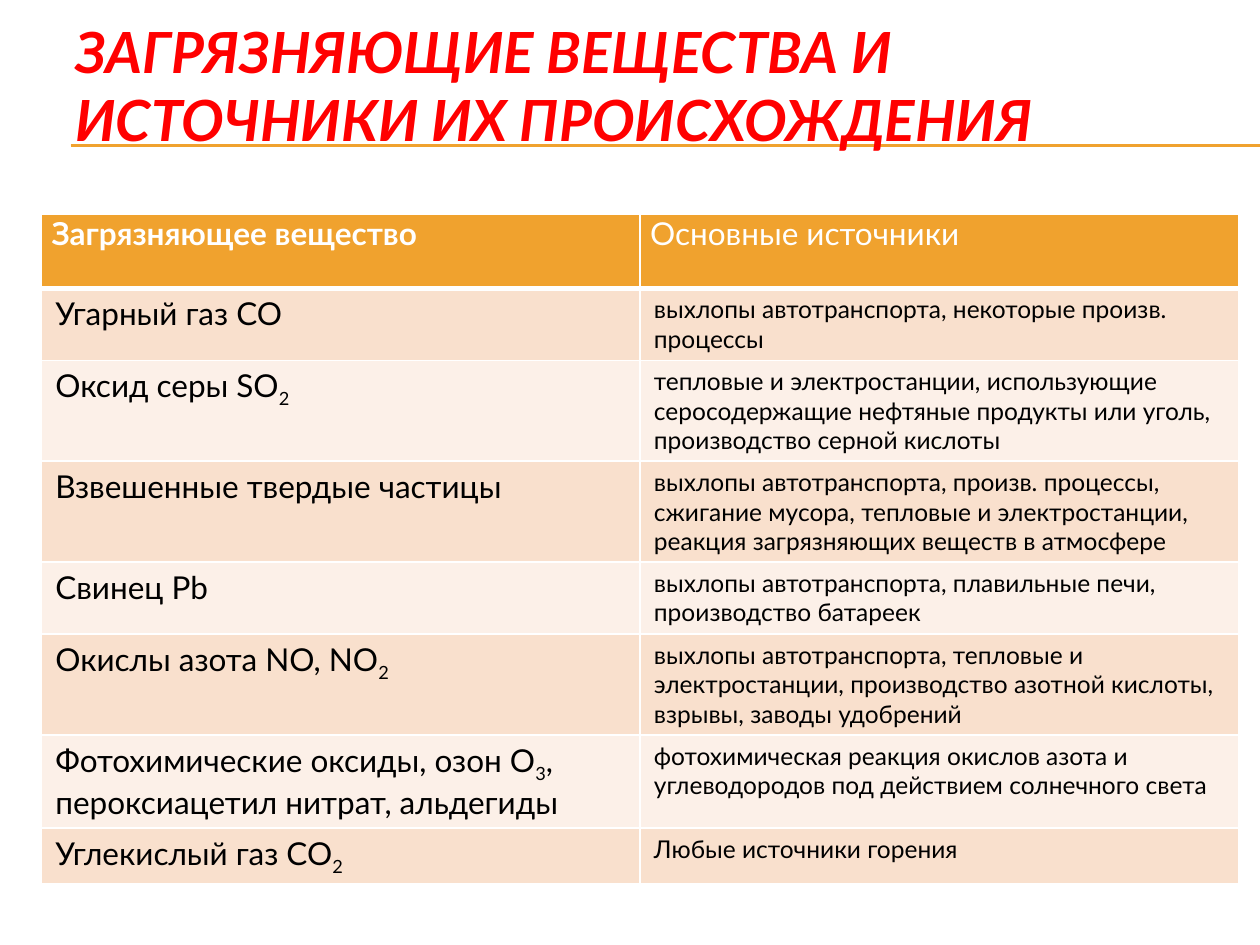
from lxml import etree
from pptx import Presentation
from pptx.dml.color import RGBColor
from pptx.enum.shapes import MSO_CONNECTOR
from pptx.enum.text import MSO_ANCHOR
from pptx.oxml.ns import qn
from pptx.util import Inches, Pt

STRAIGHT = MSO_CONNECTOR.STRAIGHT
MIDDLE = MSO_ANCHOR.MIDDLE
TOP = MSO_ANCHOR.TOP
RED = RGBColor(0xFF, 0x00, 0x00)
WHITE = RGBColor(0xFF, 0xFF, 0xFF)
BLACK = RGBColor(0x00, 0x00, 0x00)
ORANGE = RGBColor(0xF0, 0xA2, 0x2E)
PEACH = RGBColor(0xF9, 0xE0, 0xCD)
CREAM = RGBColor(0xFC, 0xF0, 0xE8)

TITLE = "ЗАГРЯЗНЯЮЩИЕ ВЕЩЕСТВА И ИСТОЧНИКИ ИХ ПРОИСХОЖДЕНИЯ"
ROWS = [
    (0.59, "Загрязняющее вещество", "Основные источники"),
    (0.57, "Угарный газ СО", "выхлопы автотранспорта, некоторые произв. процессы"),
    (0.8, "Оксид серы SO_2",
     "тепловые и электростанции, использующие серосодержащие нефтяные "
     "продукты или уголь, производство серной кислоты"),
    (0.8, "Взвешенные твердые частицы",
     "выхлопы автотранспорта, произв. процессы, сжигание мусора, тепловые и "
     "электростанции, реакция загрязняющих веществ в атмосфере"),
    (0.57, "Свинец Pb",
     "выхлопы автотранспорта, плавильные печи, производство батареек"),
    (0.8, "Окислы азота NO, NO_2",
     "выхлопы автотранспорта, тепловые и электростанции, производство "
     "азотной кислоты, взрывы, заводы удобрений"),
    (0.74, "Фотохимические оксиды, озон О_3_, пероксиацетил нитрат, альдегиды",
     "фотохимическая реакция окислов азота и углеводородов под действием "
     "солнечного света"),
    (0.43, "Углекислый газ СО_2", "Любые источники горения"),
]


class Painter:
    """Draws styled elements on the current slide."""

    face = "Lato"

    def __init__(self, slide):
        self.slide = slide

    def text(self, frame, words, size, color, bold=False, italic=False):
        para = frame.paragraphs[0]
        font = para.font
        font.name, font.size = self.face, Pt(size)
        font.bold, font.italic = bold, italic
        font.color.rgb = color
        for pos, part in enumerate(words.split("_")):
            run = para.add_run()
            run.text = part
            if pos % 2:
                run._r.get_or_add_rPr().set("baseline", "-25000")

    def rule(self, y):
        line = self.slide.shapes.add_connector(
            STRAIGHT, Inches(0.56), Inches(y), Inches(10), Inches(y))
        line.line.color.rgb = ORANGE
        line.line.width = Pt(0.75)
        etree.SubElement(line._element.spPr, qn("a:effectLst"))

    def title(self, words):
        box = self.slide.shapes.add_textbox(
            Inches(0.5), Inches(0.21), Inches(9.5), Inches(0.92))
        frame = box.text_frame
        frame.word_wrap = True
        frame.vertical_anchor = MIDDLE
        frame.margin_right = Inches(0.2)
        self.text(frame, words, 32.4, RED, True, True)

    def edge(self, cell, side, width):
        props = cell._tc.get_or_add_tcPr()
        line = etree.SubElement(props, qn("a:ln" + side), w=str(Pt(width)))
        fill = etree.SubElement(line, qn("a:solidFill"))
        etree.SubElement(fill, qn("a:srgbClr"), val=str(WHITE))

    def cell(self, cell, words, row, col):
        head = row == 0
        across, down = (0.08, 0) if head else (0.11, 0.05)
        cell.margin_left = cell.margin_right = Inches(across)
        cell.margin_top = cell.margin_bottom = Inches(down)
        cell.vertical_anchor = TOP
        for side in "LRTB":
            thick = (row, side) in ((0, "B"), (1, "T"))
            self.edge(cell, side, 3 if thick else 1)
        cell.fill.solid()
        cell.fill.fore_color.rgb = ORANGE if head else (CREAM, PEACH)[row % 2]
        size = 18 if head or col == 0 else 14
        self.text(cell.text_frame, words, size, WHITE if head else BLACK,
                  head and col == 0)

    def table(self, rows):
        high = sum(row[0] for row in rows)
        table = self.slide.shapes.add_table(
            len(rows), 2, Inches(0.33), Inches(1.7), Inches(9.5), Inches(high)).table
        table.horz_banding = False
        for row, (tall, *texts) in enumerate(rows):
            table.rows[row].height = Inches(tall)
            for col, words in enumerate(texts):
                self.cell(table.cell(row, col), words, row, col)


def main():
    deck = Presentation()
    deck.slide_width, deck.slide_height = Inches(10), Inches(7.5)
    paint = Painter(deck.slides.add_slide(deck.slide_layouts[6]))
    for y in (1.15, 1.16):
        paint.rule(y)
    paint.title(TITLE)
    paint.table(ROWS)
    deck.save("out.pptx")


if __name__ == "__main__":
    main()
